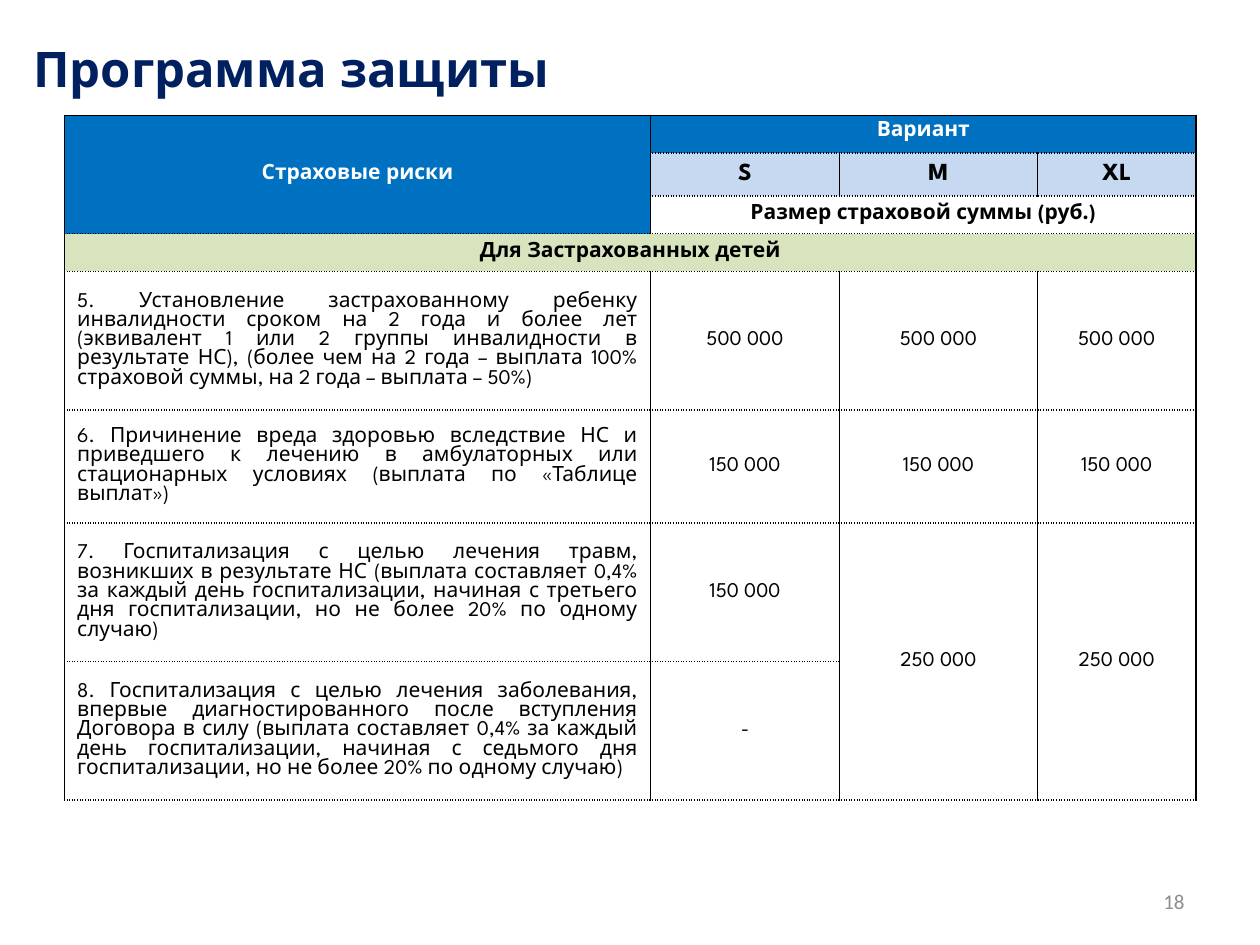
import pptx
import pptx.util
import pptx.dml.color
import pptx.enum.text
import pptx.oxml.ns
import lxml.etree

RGB = pptx.dml.color.RGBColor
NAVY = RGB(0x00, 0x20, 0x60)
BLUE = RGB(0x00, 0x70, 0xC0)
SKY = RGB(0xC6, 0xD9, 0xF1)
GREEN = RGB(0xD7, 0xE4, 0xBD)
GRAY = RGB(0x8C, 0x8C, 0x8C)
WHITE = RGB(0xFF, 0xFF, 0xFF)
BLACK = RGB(0x00, 0x00, 0x00)

ALIGN = pptx.enum.text.PP_ALIGN
ANCHOR = pptx.enum.text.MSO_ANCHOR
WIDTH, HEIGHT = pptx.util.Inches(10), pptx.util.Inches(7.5)
FONT = "League Spartan"

COLUMNS = [4.65, 1.5, 1.57, 1.26]
ROWS = [0.3, 0.34, 0.3, 0.3, 1.1, 0.9, 1.1, 1.1]
MERGES = [(0, 0, 2, 0), (0, 1, 0, 3), (2, 1, 2, 3), (3, 0, 3, 3),
          (6, 2, 7, 2), (6, 3, 7, 3)]
HEAD = dict(size=12, color=WHITE, bold=True)
SIZE = dict(size=14, color=BLACK, bold=True)
LABEL = dict(size=12, color=BLACK, bold=True)
BODY = dict(size=12, color=BLACK, bold=False)
STYLES = [(HEAD, BLUE), (SIZE, SKY), (LABEL, None), (LABEL, GREEN)] + [(BODY, None)] * 4
TEXTS = [
    ["Страховые риски", "Вариант", "", ""],
    ["", "S", "M", "XL"],
    ["", "Размер страховой суммы (руб.)", "", ""],
    ["Для Застрахованных детей", "", "", ""],
    ["5. Установление застрахованному ребенку инвалидности сроком на 2 года и более лет "
     "(эквивалент 1 или 2 группы инвалидности в результате НС), (более чем на 2 года – "
     "выплата 100% страховой суммы, на 2 года – выплата – 50%)",
     "500 000", "500 000", "500 000"],
    ["6. Причинение вреда здоровью вследствие НС и приведшего к лечению в амбулаторных или "
     "стационарных условиях (выплата по «Таблице выплат»)",
     "150 000", "150 000", "150 000"],
    ["7. Госпитализация с целью лечения травм, возникших в результате НС (выплата составляет "
     "0,4% за каждый день госпитализации, начиная с третьего дня госпитализации, но не более "
     "20% по одному случаю)",
     "150 000", "250 000", "250 000"],
    ["8. Госпитализация с целью лечения заболевания, впервые диагностированного после "
     "вступления Договора в силу (выплата составляет 0,4% за каждый день госпитализации, "
     "начиная с седьмого дня госпитализации, но не более 20% по одному случаю)",
     "-", "", ""],
]


def share(left, top, width, height):
    """Turn percentages of the slide into a box of lengths."""
    return [int(v * full / 100) for v, full in
            zip((left, top, width, height), (WIDTH, HEIGHT) * 2)]


def write(p, text, align, size, color, bold=False, name=FONT):
    """Write one formatted run into a paragraph."""
    p.alignment = align
    r = p.add_run()
    r.text = text
    r.font.color.rgb = color
    for key, value in dict(size=pptx.util.Pt(size), bold=bold, name=name).items():
        setattr(r.font, key, value)


def add_text(s, box, text, align, anchor, margins, **style):
    """Place a wrapped text box."""
    tf = s.shapes.add_textbox(*box).text_frame
    layout = dict(word_wrap=True, vertical_anchor=anchor, **margins)
    for key, value in layout.items():
        setattr(tf, key, value)
    write(tf.paragraphs[0], text, align, **style)


def add_borders(cell, top):
    """Draw solid sides and dotted horizontal rules around a cell."""
    tcPr = cell._tc.get_or_add_tcPr()
    for side, dash in dict(L="solid", R="solid", T=top, B="sysDot").items():
        ln = lxml.etree.SubElement(tcPr, pptx.oxml.ns.qn("a:ln" + side), w="12700")
        fill = lxml.etree.SubElement(ln, pptx.oxml.ns.qn("a:solidFill"))
        lxml.etree.SubElement(fill, pptx.oxml.ns.qn("a:srgbClr"), val=str(BLACK))
        lxml.etree.SubElement(ln, pptx.oxml.ns.qn("a:prstDash"), val=dash)


def add_risk_table(s, box):
    """Place the table of risks and insured sums in the box."""
    left, top, width, height = box
    table = s.shapes.add_table(len(ROWS), len(COLUMNS), *box).table
    table.first_row = table.horz_banding = False
    for column, part in zip(table.columns, COLUMNS):
        column.width = int(width * part / sum(COLUMNS))
    for row, part in zip(table.rows, ROWS):
        row.height = int(height * part / sum(ROWS))
    for r, (texts, (style, color)) in enumerate(zip(TEXTS, STYLES)):
        for c, text in enumerate(texts):
            cell = table.cell(r, c)
            add_borders(cell, "sysDot" if r else "solid")
            if color is None or (c == 0 and r in (1, 2)):
                cell.fill.background()
            else:
                cell.fill.solid()
                cell.fill.fore_color.rgb = color
            cell.vertical_anchor = ANCHOR.TOP if (r, c) == (0, 1) else ANCHOR.MIDDLE
            if text:
                align = ALIGN.JUSTIFY if c == 0 and r > 3 else ALIGN.CENTER
                write(cell.text_frame.paragraphs[0], text, align, **style)
            else:
                cell.text_frame.paragraphs[0].font.size = pptx.util.Pt(12)
    for r1, c1, r2, c2 in MERGES:
        table.cell(r1, c1).merge(table.cell(r2, c2))


def main():
    """Build the slide and save it."""
    prs = pptx.Presentation()
    prs.slide_width, prs.slide_height = WIDTH, HEIGHT
    s = prs.slides.add_slide(prs.slide_layouts[6])
    add_risk_table(s, share(5.13, 12.2, 89.8, 72.5))
    flush = dict(margin_left=0, margin_right=0, margin_bottom=0,
                 margin_top=pptx.util.Inches(0.01))
    add_text(s, share(2.65, 3.9, 67.8, 13.9), "Программа защиты", ALIGN.LEFT,
             ANCHOR.TOP, flush, size=28, color=NAVY, bold=True)
    add_text(s, share(71.7, 92.7, 23.3, 5.3), "18", ALIGN.RIGHT,
             ANCHOR.MIDDLE, {}, size=12, color=GRAY, name="Calibri")
    prs.save("out.pptx")


if __name__ == "__main__":
    main()
